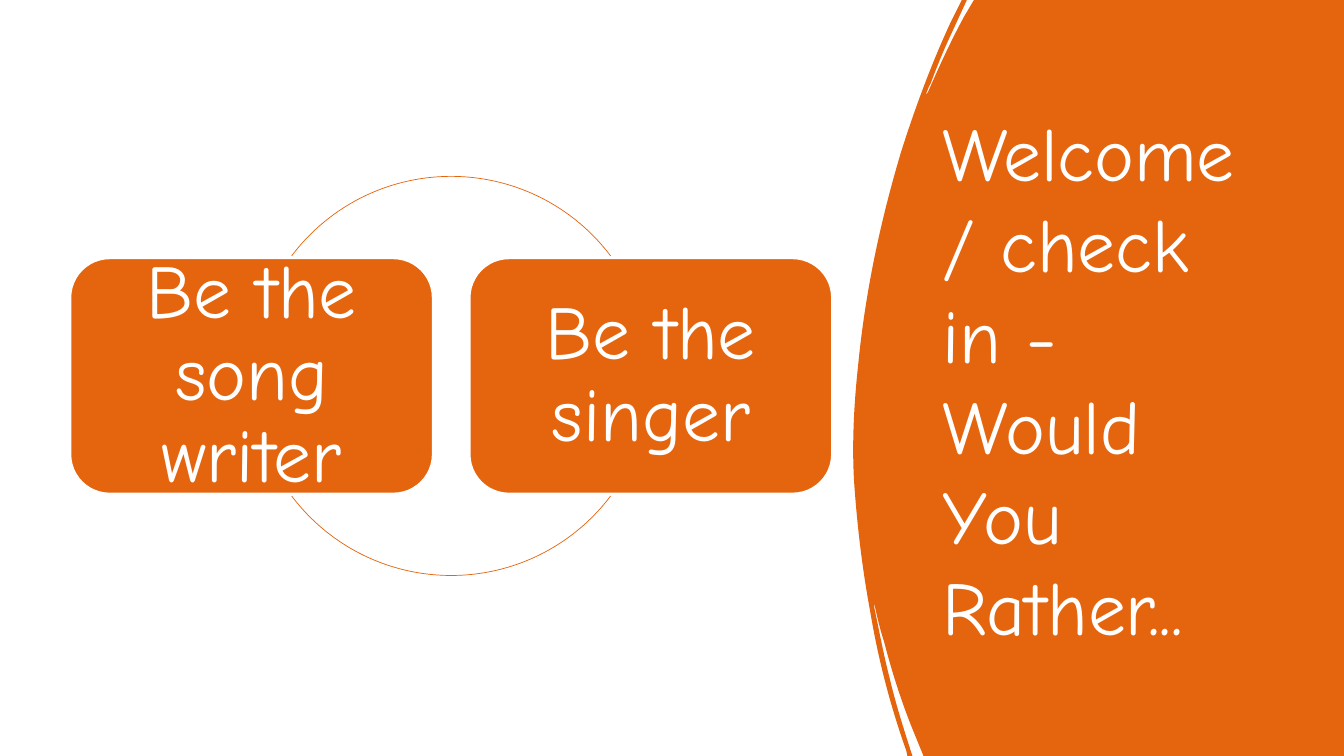
from copy import deepcopy

from pptx import Presentation
from pptx.dml.color import RGBColor
from pptx.enum.shapes import MSO_SHAPE
from pptx.enum.text import MSO_ANCHOR, MSO_AUTO_SIZE, PP_ALIGN
from pptx.oxml.ns import qn
from pptx.util import Inches, Pt

RECTANGLE = MSO_SHAPE.RECTANGLE
ROUNDED = MSO_SHAPE.ROUNDED_RECTANGLE
ARC = MSO_SHAPE.ARC
MIDDLE = MSO_ANCHOR.MIDDLE
NO_AUTOFIT = MSO_AUTO_SIZE.NONE
LEFT, CENTER = PP_ALIGN.LEFT, PP_ALIGN.CENTER

ORANGE, WHITE = "E4650E", "FFFFFF"
FONT, FONT_SIZE = "Comic Neue", 54
SLIDE_WIDTH, SLIDE_HEIGHT = 13.33, 7.5

# Panel edge in inches from the panel's corner: pairs are lines, sixes are Bézier curves
PANEL_START = (4.87, 0)
PANEL_EDGE = [
    (1.2, 0), (1.1, 0.17),
    (0.97, 0.41, 0.86, 0.65, 0.75, 0.9),
    (0.74, 0.92, 0.74, 0.93, 0.72, 0.94),
    (0.74, 0.9, 0.75, 0.86, 0.77, 0.83),
    (0.83, 0.67, 0.89, 0.52, 0.96, 0.37),
    (1.13, 0), (1.08, 0), (0.97, 0.22),
    (0.78, 0.63, 0.62, 1.06, 0.48, 1.5),
    (0.27, 2.2, 0.12, 2.91, 0.05, 3.64),
    (0.01, 4.01, -0.01, 4.39, 0.01, 4.76),
    (0.04, 5.2, 0.09, 5.63, 0.17, 6.06),
    (0.25, 6.54, 0.37, 7, 0.53, 7.45),
    (0.54, 7.5), (0.59, 7.5), (0.58, 7.47),
    (0.5, 7.22, 0.42, 6.97, 0.36, 6.71),
    (0.3, 6.48, 0.26, 6.25, 0.21, 6.02),
    (0.21, 6.01, 0.21, 6, 0.21, 5.98),
    (0.24, 6.12, 0.27, 6.25, 0.31, 6.37),
    (0.39, 6.68, 0.49, 6.99, 0.61, 7.28),
    (0.7, 7.5), (4.87, 7.5),
]


def color(value):
    return RGBColor.from_string(value)


def fill_shape(shape, value):
    shape.shadow.inherit = False
    shape.fill.solid()
    shape.fill.fore_color.rgb = color(value)


def set_text(shape, text, alignment, line_spacing):
    frame = shape.text_frame
    frame.text = text
    frame.word_wrap = True
    frame.auto_size = NO_AUTOFIT
    frame.vertical_anchor = MIDDLE
    paragraph = frame.paragraphs[0]
    paragraph.alignment = alignment
    paragraph.line_spacing = line_spacing
    paragraph.font.name = FONT
    paragraph.font.size = Pt(FONT_SIZE)
    paragraph.font.color.rgb = color(WHITE)


def add_curved_outline(slide, left, top, start, segments):
    """Draw the segments as lines, then give the curved ones their control points."""
    def place(x, y):
        return Inches(left + x), Inches(top + y)

    builder = slide.shapes.build_freeform(*place(*start))
    builder.add_line_segments([place(*segment[-2:]) for segment in segments], close=True)
    outline = builder.convert_to_shape()
    lines = list(outline._element.iter(qn("a:lnTo")))
    for line, segment in zip(lines, segments):
        if len(segment) == 2:
            continue
        line.tag = qn("a:cubicBezTo")
        end_point = line[0]
        for control in (segment[:2], segment[2:4]):
            x, y = place(*control)
            point = deepcopy(end_point)
            point.set("x", str(x - outline.left))
            point.set("y", str(y - outline.top))
            end_point.addprevious(point)
    return outline


def add_background(slide, left, top, width, height):
    background = slide.shapes.add_shape(
        RECTANGLE, Inches(left), Inches(top), Inches(width), Inches(height))
    fill_shape(background, WHITE)
    background.line.fill.background()


def add_title_panel(slide, left, top, text):
    # Brushed orange panel
    panel = add_curved_outline(slide, left, top, PANEL_START, PANEL_EDGE)
    fill_shape(panel, ORANGE)
    panel.line.fill.background()

    # Title, brought in front of the panel
    title = slide.shapes.title
    title.left, title.top = Inches(left + 0.79), Inches(top + 0.7)
    title.width, title.height = Inches(3.39), Inches(6.11)
    set_text(title, text, LEFT, 1.0)
    panel._element.addnext(title._element)


def add_choice_cycle(slide, left, top, width, height, choices):
    # Choice boxes, centred vertically
    box_width, box_height = 3.59, 2.33
    pitch = (width - box_width) / (len(choices) - 1)
    for index, choice in enumerate(choices):
        box = slide.shapes.add_shape(
            ROUNDED, Inches(left + index * pitch), Inches(top + (height - box_height) / 2),
            Inches(box_width), Inches(box_height))
        fill_shape(box, ORANGE)
        box.line.color.rgb = color(WHITE)
        box.line.width = Pt(1)
        set_text(box, choice, CENTER, 0.9)
        frame = box.text_frame
        frame.margin_left = frame.margin_right = Inches(0.23)
        frame.margin_top = frame.margin_bottom = Inches(0.23)

    # Arcs of the circle that joins the boxes
    for start, end in ((217, 323), (37, 143)):
        arc = slide.shapes.add_shape(
            ARC, Inches(left + (width - height) / 2), Inches(top),
            Inches(height), Inches(height))
        arc.shadow.inherit = False
        arc.fill.background()
        arc.line.color.rgb = color(ORANGE)
        arc.line.width = Pt(0.5)
        # An adjustment of 0.6 is one degree
        arc.adjustments[0] = start * 0.6
        arc.adjustments[1] = end * 0.6


def main():
    presentation = Presentation()
    presentation.slide_width = Inches(SLIDE_WIDTH)
    presentation.slide_height = Inches(SLIDE_HEIGHT)
    slide = presentation.slides.add_slide(presentation.slide_layouts[5])
    add_background(slide, 0, 0, SLIDE_WIDTH, SLIDE_HEIGHT)
    add_title_panel(slide, 8.46, 0, "Welcome/ check in - Would You Rather...")
    add_choice_cycle(slide, 0.7, 1.75, 7.55, 3.96, ["Be the song writer", "Be the singer"])
    presentation.save("out.pptx")


if __name__ == "__main__":
    main()
